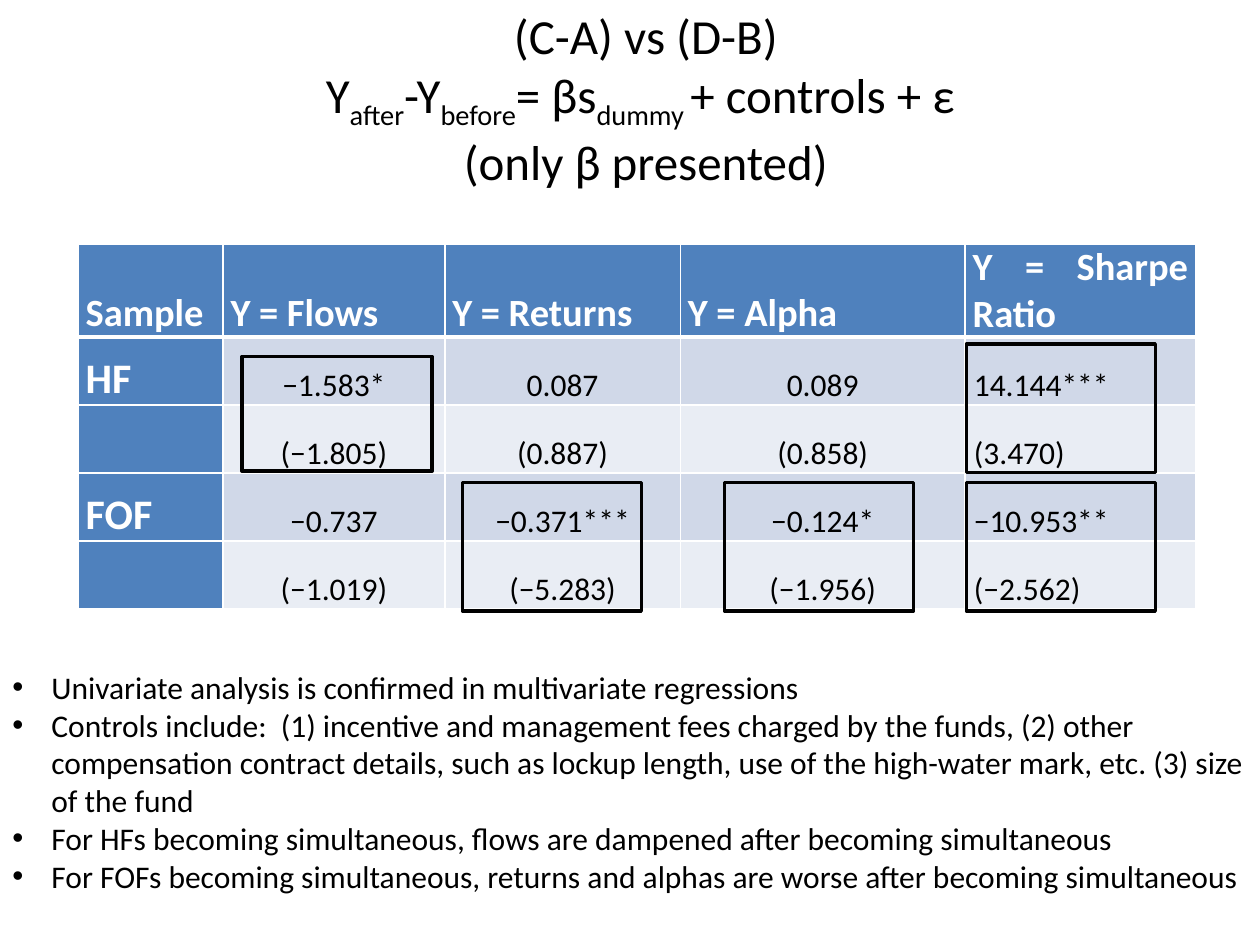
from typing import NamedTuple

import lxml.etree
import pptx
import pptx.dml.color
import pptx.enum.shapes
import pptx.enum.text
import pptx.oxml.ns
import pptx.util

Inches = pptx.util.Inches
Pt = pptx.util.Pt
Align = pptx.enum.text.PP_ALIGN
Anchor = pptx.enum.text.MSO_ANCHOR
qn = pptx.oxml.ns.qn

FONT = "Calibri"
BLACK, WHITE, BLUE = "000000", "FFFFFF", "4F81BD"
BANDS = ("D0D8E8", "E9EDF4")


class Box(NamedTuple):
    left: float
    top: float
    width: float
    height: float


class Style(NamedTuple):
    size: int
    color: str = BLACK
    bold: bool = False


HEAD = Style(22, WHITE, True)
LABEL = Style(24, WHITE, True)
BODY = Style(18)
TITLE = Style(28)

LINES = [
    [("(C-A) vs (D-B)", False)],
    [("Y", False), ("after", True), ("-Y", False), ("before", True),
     ("= βs", False), ("dummy ", True), ("+ controls + ε ", False)],
    [("(only β presented)", False)],
]
COLS = (1.15, 1.76, 1.87, 2.26, 1.83)
ROWS = (0.73, 0.54, 0.54, 0.54, 0.54)
CELLS = [
    ("Sample", "Y = Flows", "Y = Returns", "Y = Alpha", "Y = Sharpe Ratio"),
    ("HF", "−1.583*", "0.087", "0.089", "14.144***"),
    ("", "(−1.805)", "(0.887)", "(0.858)", "(3.470)"),
    ("FOF", "−0.737", "−0.371***", "−0.124*", "−10.953**"),
    ("", "(−1.019)", "(−5.283)", "(−1.956)", "(−2.562)"),
]
FRAMES = [
    Box(1.92, 2.83, 1.51, 0.91),
    Box(3.67, 3.83, 1.42, 1.02),
    Box(5.75, 3.83, 1.5, 1.02),
    Box(7.67, 2.73, 1.5, 1.02),
    Box(7.67, 3.83, 1.5, 1.02),
]
NOTES = [
    "Univariate analysis is confirmed in multivariate regressions",
    "Controls include:  (1) incentive and management fees charged by the funds, "
    "(2) other compensation contract details, such as lockup length, use of the "
    "high-water mark, etc. (3) size of the fund",
    "For HFs becoming simultaneous, flows are dampened after becoming simultaneous",
    "For FOFs becoming simultaneous, returns and alphas are worse after becoming "
    "simultaneous",
]


def color(code: str) -> pptx.dml.color.RGBColor:
    return pptx.dml.color.RGBColor.from_string(code)


def place(box: Box) -> list:
    return [Inches(side) for side in box]


def write(para, text: str, style: Style, low: bool = False) -> None:
    run = para.add_run()
    run.text = text
    run.font.name = FONT
    run.font.size = Pt(style.size)
    run.font.bold = style.bold
    run.font.color.rgb = color(style.color)
    if low:
        run._r.get_or_add_rPr().set("baseline", "-25000")


def add_title(slide, box: Box) -> None:
    frame = slide.shapes.add_textbox(*place(box)).text_frame
    frame.word_wrap = True
    frame.vertical_anchor = Anchor.MIDDLE
    para = frame.paragraphs[0]
    para.alignment = Align.CENTER
    for row, line in enumerate(LINES):
        if row:
            para.add_line_break()
        for text, low in line:
            write(para, text, TITLE, low)


def add_edges(cell, base: int) -> None:
    props = cell._tc.get_or_add_tcPr()
    widths = {"a:lnL": 1, "a:lnR": 1, "a:lnT": 1, "a:lnB": base}
    for spot, (tag, width) in enumerate(widths.items()):
        edge = lxml.etree.Element(qn(tag), w=str(Pt(width)))
        fill = lxml.etree.SubElement(edge, qn("a:solidFill"))
        lxml.etree.SubElement(fill, qn("a:srgbClr"), val=WHITE)
        props.insert(spot, edge)


def fill_cell(cell, text: str, row: int, col: int) -> None:
    head, label = row == 0, col == 0
    last = col == len(COLS) - 1
    cell.fill.solid()
    cell.fill.fore_color.rgb = color(BLUE if head or label else BANDS[(row - 1) % 2])
    cell.vertical_anchor = Anchor.BOTTOM
    cell.margin_left = cell.margin_right = Inches(0.06 if head or label else 0.07)
    cell.margin_top = cell.margin_bottom = 0
    add_edges(cell, 3 if head else 1)
    para = cell.text_frame.paragraphs[0]
    if head:
        para.alignment = Align.JUSTIFY if last else Align.LEFT
    else:
        para.alignment = Align.LEFT if label or last else Align.CENTER
    if text:
        write(para, text, HEAD if head else LABEL if label else BODY)


def add_grid(slide, left: float, top: float) -> None:
    box = Box(left, top, sum(COLS), sum(ROWS))
    table = slide.shapes.add_table(len(ROWS), len(COLS), *place(box)).table
    for col, width in zip(table.columns, COLS):
        col.width = Inches(width)
    for row, height in zip(table.rows, ROWS):
        row.height = Inches(height)
    for row, texts in enumerate(CELLS):
        for col, text in enumerate(texts):
            fill_cell(table.cell(row, col), text, row, col)


def add_frame(slide, box: Box) -> None:
    kind = pptx.enum.shapes.MSO_SHAPE.RECTANGLE
    shape = slide.shapes.add_shape(kind, *place(box))
    shape.shadow.inherit = False
    shape.fill.background()
    shape.line.color.rgb = color(BLACK)
    shape.line.width = Pt(2)


def add_notes(slide, box: Box) -> None:
    frame = slide.shapes.add_textbox(*place(box)).text_frame
    frame.word_wrap = True
    for spot, text in enumerate(NOTES):
        para = frame.add_paragraph() if spot else frame.paragraphs[0]
        props = para._p.get_or_add_pPr()
        props.set("marL", str(Inches(0.31)))
        props.set("indent", str(Inches(-0.31)))
        lxml.etree.SubElement(props, qn("a:buFont"), typeface="Arial")
        lxml.etree.SubElement(props, qn("a:buChar"), char="•")
        write(para, text, BODY)


def main() -> None:
    deck = pptx.Presentation()
    deck.slide_width, deck.slide_height = Inches(10), Inches(7.5)
    slide = deck.slides.add_slide(deck.slide_layouts[6])
    add_title(slide, Box(0.5, 0, 9.25, 1.55))
    add_grid(slide, 0.62, 1.94)
    add_notes(slide, Box(0, 5.25, 10, 1.92))
    for box in FRAMES:
        add_frame(slide, box)
    deck.save("out.pptx")


if __name__ == "__main__":
    main()
